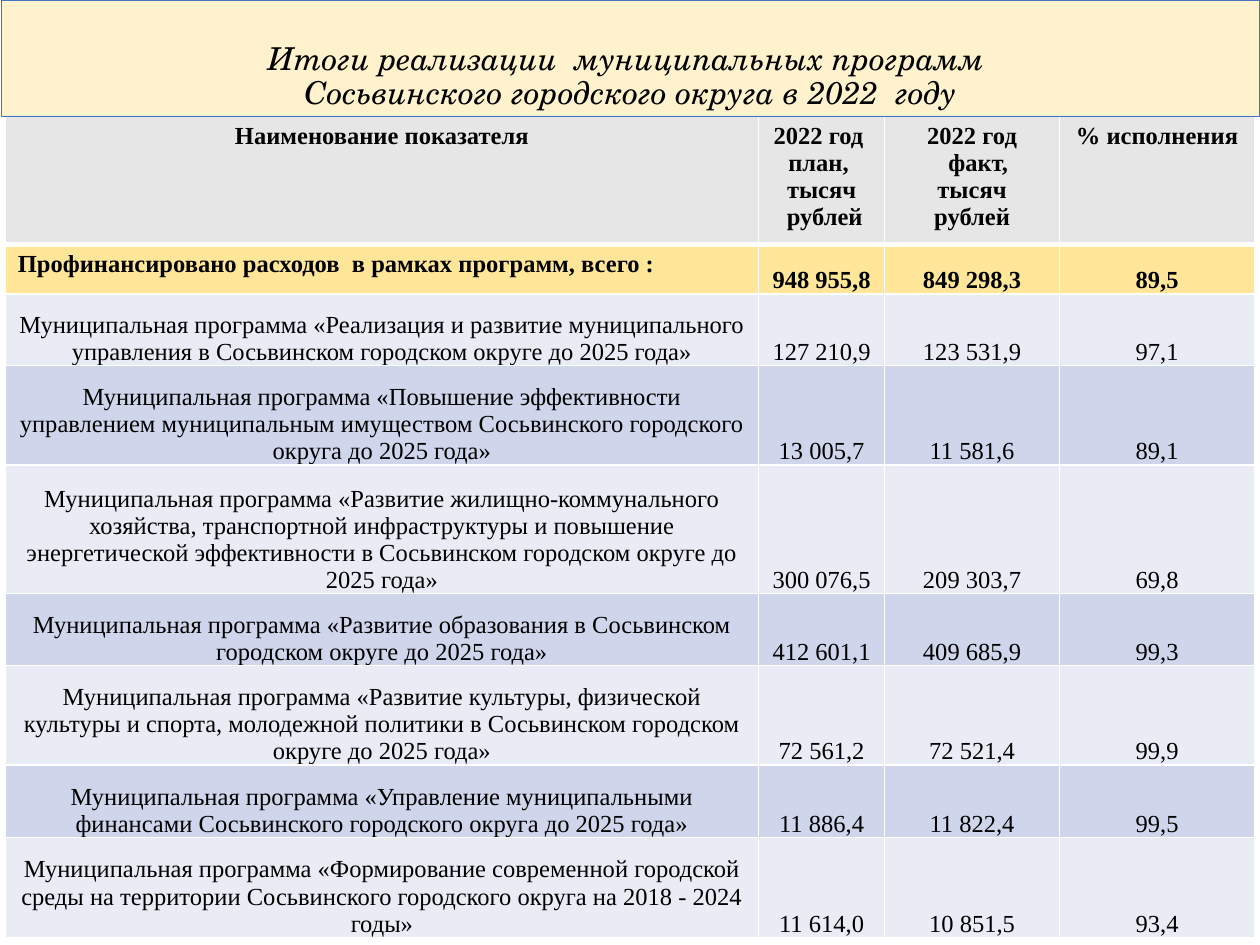
import pptx
import pptx.dml.color
import pptx.enum.shapes
import pptx.enum.text
import pptx.oxml
import pptx.oxml.ns
import pptx.util

Pt = pptx.util.Pt
RGBColor = pptx.dml.color.RGBColor
ALIGN = pptx.enum.text.PP_ALIGN
ANCHOR = pptx.enum.text.MSO_ANCHOR

BLACK = RGBColor(0x00, 0x00, 0x00)
WHITE = RGBColor(0xFF, 0xFF, 0xFF)
CREAM = RGBColor(0xFF, 0xF2, 0xCC)
BLUE = RGBColor(0x44, 0x72, 0xC4)
HEADER_GREY = RGBColor(0xE7, 0xE6, 0xE6)
TOTAL_YELLOW = RGBColor(0xFF, 0xE6, 0x99)
BANDS = [RGBColor(0xE9, 0xEB, 0xF5), RGBColor(0xCF, 0xD5, 0xEA)]

TITLE_FONT = {"name": "TeX Gyre Schola", "size": Pt(18), "bold": False, "italic": True}
CELL_FONT = {"name": "Times New Roman", "size": Pt(14)}
BODY_CELL = {
    "vertical_anchor": ANCHOR.BOTTOM,
    "margin_left": Pt(5), "margin_right": Pt(5),
    "margin_top": 0, "margin_bottom": 0,
}

COLUMN_WIDTHS = [430.5, 72, 100, 111.5]
ROW_HEIGHTS = [73.4, 28, 41, 57, 73.4, 41, 57, 41.5, 57]
ROWS = [
    ["Наименование показателя", "2022 год  план, \nтысяч\n рублей",
     "2022 год\n  факт,\nтысяч\nрублей", "% исполнения"],
    ["Профинансировано расходов  в рамках программ, всего :",
     "948 955,8", "849 298,3", "89,5"],
    ["Муниципальная программа «Реализация и развитие муниципального управления "
     "в Сосьвинском городском округе до 2025 года»",
     "127 210,9", "123 531,9", "97,1"],
    ["Муниципальная программа «Повышение эффективности управлением муниципальным "
     "имуществом Сосьвинского городского округа до 2025 года»",
     "13 005,7", "11 581,6", "89,1"],
    ["Муниципальная программа «Развитие жилищно-коммунального хозяйства, транспортной "
     "инфраструктуры и повышение энергетической эффективности в Сосьвинском городском "
     "округе до 2025 года»",
     "300 076,5", "209 303,7", "69,8"],
    ["Муниципальная программа «Развитие образования в Сосьвинском городском округе "
     "до 2025 года»",
     "412 601,1", "409 685,9", "99,3"],
    ["Муниципальная программа «Развитие культуры, физической культуры и спорта, "
     "молодежной политики в Сосьвинском городском округе до 2025 года»",
     "72 561,2", "72 521,4", "99,9"],
    ["Муниципальная программа «Управление муниципальными финансами Сосьвинского "
     "городского округа до 2025 года»",
     "11 886,4", "11 822,4", "99,5"],
    ["Муниципальная программа «Формирование современной городской среды на территории "
     "Сосьвинского городского округа на 2018 - 2024 годы»",
     "11 614,0", "10 851,5", "93,4"],
]


def apply(target, values):
    for name, value in values.items():
        setattr(target, name, value)


def add_borders(cell, widths):
    """Give the cell white edges; widths maps L, R, T, B, in that order, to points."""
    for edge, width in widths.items():
        cell._tc.get_or_add_tcPr().append(pptx.oxml.parse_xml(
            f'<a:ln{edge} {pptx.oxml.ns.nsdecls("a")} w="{Pt(width)}">'
            f'<a:solidFill><a:srgbClr val="{WHITE}"/></a:solidFill></a:ln{edge}>'))


presentation = pptx.Presentation()
presentation.slide_width, presentation.slide_height = Pt(720), Pt(540)
slide = presentation.slides.add_slide(presentation.slide_layouts[6])

# Programme table
table = slide.shapes.add_table(
    len(ROWS), len(COLUMN_WIDTHS), Pt(3), Pt(66.5),
    Pt(sum(COLUMN_WIDTHS)), Pt(sum(ROW_HEIGHTS))).table
for column, width in zip(table.columns, COLUMN_WIDTHS):
    column.width = Pt(width)

for r, (texts, height) in enumerate(zip(ROWS, ROW_HEIGHTS)):
    table.rows[r].height = Pt(height)
    row_fill = [HEADER_GREY, TOTAL_YELLOW][r] if r < 2 else BANDS[r % 2]
    for c, text in enumerate(texts):
        cell = table.cell(r, c)
        is_total_label = r == 1 and c == 0
        add_borders(cell, {"L": 1, "R": 1, "T": 3 if r == 1 else 1, "B": 3 if r == 0 else 1})
        cell.fill.solid()
        cell.fill.fore_color.rgb = row_fill
        if r > 0 and not is_total_label:
            apply(cell, BODY_CELL)
        cell.text = text
        for paragraph in cell.text_frame.paragraphs:
            paragraph.alignment = ALIGN.LEFT if is_total_label else ALIGN.CENTER
            for run in paragraph.runs:
                apply(run.font, CELL_FONT)
                run.font.bold = r < 2
                run.font.color.rgb = BLACK

# Title banner
banner = slide.shapes.add_shape(
    pptx.enum.shapes.MSO_SHAPE.RECTANGLE, Pt(0.75), 0, Pt(719.25), Pt(66.5))
banner.shadow.inherit = False
banner.fill.solid()
banner.fill.fore_color.rgb = CREAM
banner.line.color.rgb = BLUE
banner.line.width = Pt(0.5)
apply(banner.text_frame, {
    "word_wrap": True, "vertical_anchor": ANCHOR.MIDDLE, "margin_top": Pt(25.5)})
heading = banner.text_frame.paragraphs[0]
heading.text = "Итоги реализации  муниципальных программ \vСосьвинского городского округа в 2022  году"
apply(heading, {"alignment": ALIGN.CENTER, "line_spacing": 0.9})
for run in heading.runs:
    apply(run.font, TITLE_FONT)
    run.font.color.rgb = BLACK

presentation.save("out.pptx")
